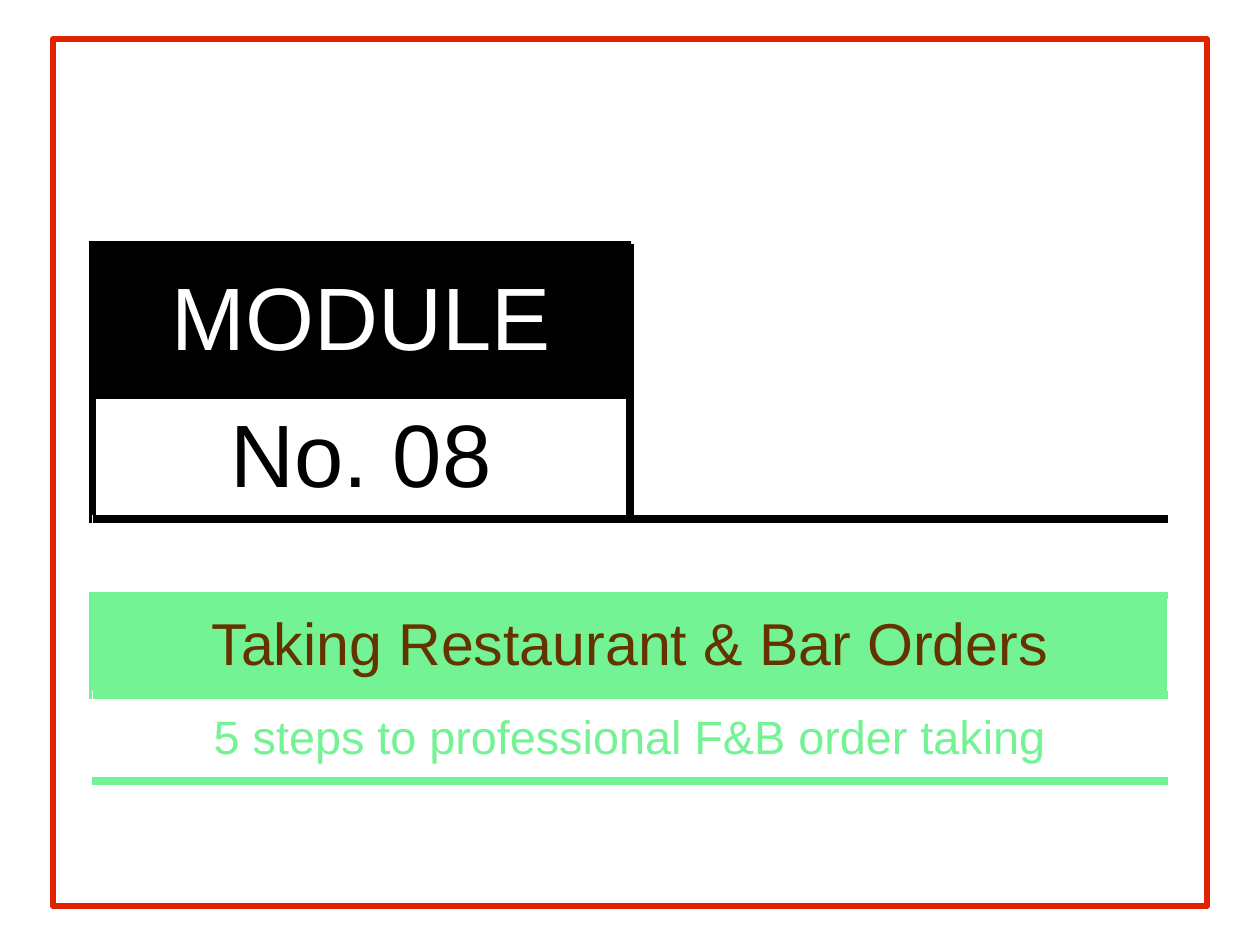
"""Build the module title slide: a bordered table inside a red frame."""
from lxml.etree import SubElement
from pptx import Presentation
from pptx.dml.color import RGBColor
from pptx.enum.shapes import MSO_SHAPE
from pptx.enum.text import MSO_ANCHOR, PP_ALIGN
from pptx.oxml.ns import qn
from pptx.util import Pt

BLACK, WHITE, GREEN, BROWN, RED = "000000", "FFFFFF", "73F394", "653300", "E02400"


def rgb(value):
    return RGBColor.from_string(value)


def write(cell, text, size=18, color=BLACK, fill=WHITE):
    cell.fill.solid()
    cell.fill.fore_color.rgb = rgb(fill)
    cell.vertical_anchor = MSO_ANCHOR.MIDDLE
    cell.margin_left = cell.margin_right = cell.margin_top = cell.margin_bottom = Pt(4.5)
    p = cell.text_frame.paragraphs[0]
    p.alignment = PP_ALIGN.CENTER
    if text:
        r = p.add_run()
        r.text = text
        r.font.name, r.font.size, r.font.color.rgb = "Arial", Pt(size), rgb(color)


prs = Presentation()
prs.slide_width, prs.slide_height = Pt(1024), Pt(768)
s = prs.slides.add_slide(prs.slide_layouts[6])

heights = [88, 122, 101, 62, 81, 70, 64]
tbl = s.shapes.add_table(len(heights), 2, Pt(75), Pt(111), Pt(874), Pt(sum(heights))).table
tbl.first_row = tbl.horz_banding = False
for col in tbl.columns:
    col.width = Pt(437)
for row, height in zip(tbl.rows, heights):
    row.height = Pt(height)

labels = {
    (1, 0): dict(text="MODULE", size=72, color=WHITE, fill=BLACK),
    (2, 0): dict(text="No. 08", size=72),
    (4, 0): dict(text="Taking Restaurant & Bar Orders", size=48, color=BROWN, fill=GREEN),
    (5, 0): dict(text="5 steps to professional F&B order taking", size=38, color=GREEN),
}
for i in range(len(heights)):
    for j in range(2):
        write(tbl.cell(i, j), **labels.get((i, j), dict(text="")))

tbl.cell(1, 1).merge(tbl.cell(2, 1))
for i in range(3, len(heights)):
    tbl.cell(i, 0).merge(tbl.cell(i, 1))

borders = [
    (0, 0, "B", BLACK), (1, 0, "LRT", BLACK), (2, 0, "LRB", BLACK),
    (1, 1, "LB", BLACK), (2, 1, "LB", BLACK),
]
for j in range(2):
    borders += [(3, j, "T", BLACK), (3, j, "B", GREEN), (4, j, "TB", GREEN),
                (5, j, "TB", GREEN), (6, j, "T", GREEN)]
borders += [(4, 0, "L", GREEN), (4, 1, "R", GREEN)]

for side in "BTRL":
    for i, j, sides, color in borders:
        if side in sides:
            tcPr = tbl.cell(i, j)._tc.get_or_add_tcPr()
            ln = SubElement(tcPr, qn(f"a:ln{side}"), w=str(Pt(7)))
            SubElement(SubElement(ln, qn("a:solidFill")), qn("a:srgbClr"), val=color)
            tcPr.insert(0, ln)

sp = s.shapes.add_shape(MSO_SHAPE.RECTANGLE, Pt(43), Pt(32), Pt(938), Pt(704))
sp.shadow.inherit = False
sp.fill.background()
sp.line.color.rgb = rgb(RED)
sp.line.width = Pt(5)

prs.save("out.pptx")
